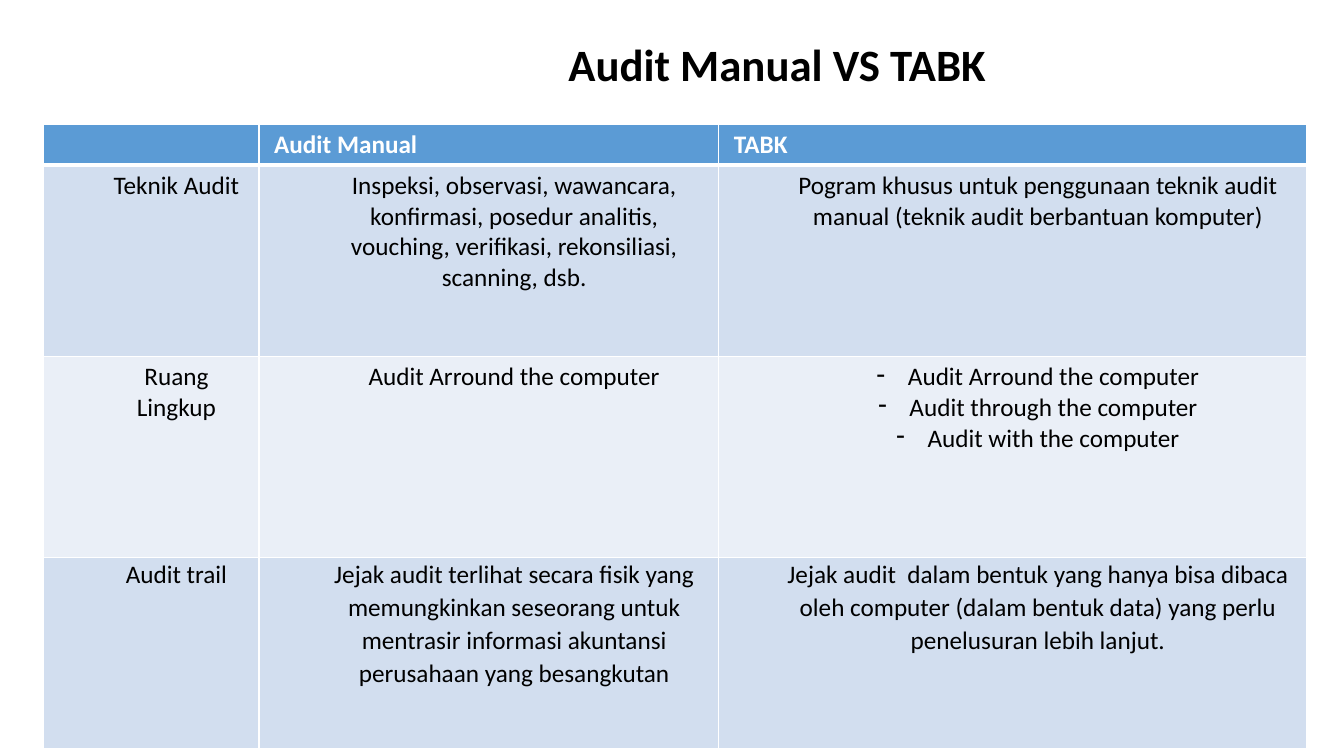
from dataclasses import dataclass

from lxml.etree import SubElement
from pptx import Presentation
from pptx.dml.color import RGBColor
from pptx.enum.text import MSO_ANCHOR, PP_ALIGN
from pptx.oxml import parse_xml
from pptx.oxml.ns import nsdecls, qn
from pptx.slide import Slide
from pptx.table import Table, _Cell as Cell
from pptx.text.text import _Paragraph as Paragraph
from pptx.util import Pt

EMU_PER_PX = 9144  # 100 px to the inch


@dataclass(frozen=True)
class Theme:
    font: str = "Calibri"
    title_size: int = 32
    body_size: int = 18
    ink: str = "000000"
    paper: str = "FFFFFF"
    header: str = "5B9BD5"
    band_dark: str = "D2DEEF"
    band_light: str = "EAEFF7"
    thin: int = 1
    thick: int = 3


@dataclass(frozen=True)
class Row:
    height: int
    fill: str
    texts: tuple[str, ...]
    margins: tuple[int, int] = (15, 5)
    line_spacing: float | None = None


THEME = Theme()
COLUMN_WIDTHS = (214, 456, 583)
INDENT, BULLET_INDENT, BULLET_HANG = 50, 81, -31
ROWS = (
    Row(41, THEME.header, ("", "Audit Manual", "TABK")),
    Row(190, THEME.band_dark, (
        "Teknik Audit",
        "Inspeksi, observasi, wawancara, konfirmasi, posedur analitis, "
        "vouching, verifikasi, rekonsiliasi, scanning, dsb.",
        "Pogram khusus untuk penggunaan teknik audit manual "
        "(teknik audit berbantuan komputer)",
    )),
    Row(199, THEME.band_light, (
        "Ruang Lingkup",
        "Audit Arround the computer",
        "Audit Arround the computer\nAudit through the computer\n"
        "Audit with the computer",
    )),
    Row(190, THEME.band_dark, (
        "Audit trail",
        "Jejak audit terlihat secara fisik yang memungkinkan seseorang untuk "
        "mentrasir informasi akuntansi perusahaan yang besangkutan",
        "Jejak audit  dalam bentuk yang hanya bisa dibaca oleh computer "
        "(dalam bentuk data) yang perlu penelusuran lebih lanjut.",
    ), margins=(0, 0), line_spacing=1.07),
)


def px(length: int) -> int:
    return length * EMU_PER_PX


def format_runs(para: Paragraph, size: int, color: str, bold: bool) -> None:
    for span in para.runs:
        span.font.name = THEME.font
        span.font.size = Pt(size)
        span.font.bold = bold
        span.font.color.rgb = RGBColor.from_string(color)


def indent_paragraph(para: Paragraph, bulleted: bool) -> None:
    para.level = 1
    properties = para._p.get_or_add_pPr()
    properties.set("marL", str(px(BULLET_INDENT if bulleted else INDENT)))
    properties.set("indent", str(px(BULLET_HANG if bulleted else 0)))
    if bulleted:
        SubElement(properties, qn("a:buChar")).set("char", "-")


def draw_borders(cell: Cell, top: int, bottom: int) -> None:
    """Put the four border lines ahead of the cell's fill, as the schema asks."""
    sides = {"lnL": THEME.thin, "lnR": THEME.thin, "lnT": top, "lnB": bottom}
    properties = cell._tc.get_or_add_tcPr()
    for position, (side, width) in enumerate(sides.items()):
        properties.insert(position, parse_xml(
            f'<a:{side} {nsdecls("a")} w="{Pt(width)}"><a:solidFill>'
            f'<a:srgbClr val="{THEME.paper}"/></a:solidFill></a:{side}>'
        ))


def fill_cell(cell: Cell, row: Row, text: str, row_index: int) -> None:
    is_header = row_index == 0
    cell.fill.solid()
    cell.fill.fore_color.rgb = RGBColor.from_string(row.fill)
    draw_borders(
        cell,
        top=THEME.thick if row_index == 1 else THEME.thin,
        bottom=THEME.thick if is_header else THEME.thin,
    )
    side, edge = row.margins
    cell.margin_left = cell.margin_right = px(side)
    cell.margin_top = cell.margin_bottom = px(edge)
    cell.text_frame.text = text
    for para in cell.text_frame.paragraphs:
        if not is_header:
            para.alignment = PP_ALIGN.CENTER
            para.line_spacing = row.line_spacing
            indent_paragraph(para, bulleted="\n" in text)
        color = THEME.paper if is_header else THEME.ink
        format_runs(para, THEME.body_size, color, bold=is_header)


def add_title(page: Slide, text: str) -> None:
    box = page.shapes.add_textbox(px(247), px(21), px(1048), px(91))
    frame = box.text_frame
    frame.word_wrap = True
    frame.vertical_anchor = MSO_ANCHOR.MIDDLE
    frame.text = text
    para = frame.paragraphs[0]
    para.alignment = PP_ALIGN.CENTER
    para.line_spacing = 0.9
    format_runs(para, THEME.title_size, THEME.ink, bold=True)


def add_comparison(page: Slide) -> None:
    table: Table = page.shapes.add_table(
        len(ROWS), len(COLUMN_WIDTHS), px(43), px(123),
        px(sum(COLUMN_WIDTHS)), px(sum(row.height for row in ROWS)),
    ).table
    table.horz_banding = False
    for column, width in zip(table.columns, COLUMN_WIDTHS):
        column.width = px(width)
    for row_index, row in enumerate(ROWS):
        table.rows[row_index].height = px(row.height)
        for column_index, text in enumerate(row.texts):
            fill_cell(table.cell(row_index, column_index), row, text, row_index)


def main() -> None:
    deck = Presentation()
    deck.slide_width, deck.slide_height = px(1333), px(750)
    page = deck.slides.add_slide(deck.slide_layouts[6])
    add_title(page, "Audit Manual VS TABK")
    add_comparison(page)
    deck.save("out.pptx")


if __name__ == "__main__":
    main()
